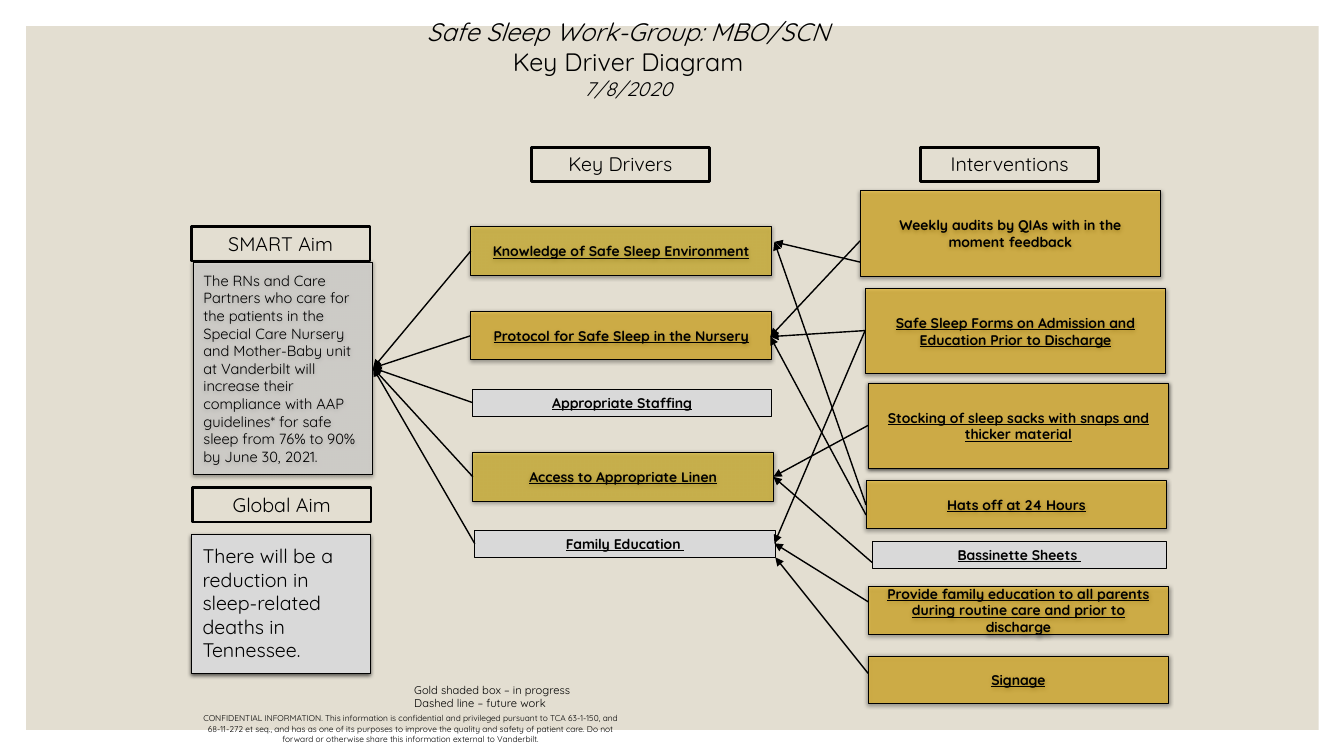
from dataclasses import dataclass

from lxml import etree
from pptx import Presentation
from pptx.dml.color import RGBColor
from pptx.enum.shapes import MSO_CONNECTOR, MSO_SHAPE
from pptx.enum.text import MSO_ANCHOR, PP_ALIGN
from pptx.oxml.ns import qn
from pptx.util import Inches, Pt

RECTANGLE = MSO_SHAPE.RECTANGLE
STRAIGHT = MSO_CONNECTOR.STRAIGHT
TOP, MIDDLE = MSO_ANCHOR.TOP, MSO_ANCHOR.MIDDLE
LEFT, CENTER = PP_ALIGN.LEFT, PP_ALIGN.CENTER
SLIDE_WIDTH, SLIDE_HEIGHT = Inches(13.33), Inches(7.5)


@dataclass(frozen=True)
class Theme:
    font: str = "Quicksand"
    ink: str = "000000"
    panel: str = "E3DED1"
    white: str = "FFFFFF"
    grey: str = "D9D9D9"
    yellow: str = "F3C70B"
    amber: str = "FFC000"
    gold: str = "CCAA46"
    title: float = 18
    heading: float = 14
    aim: float = 10.5
    label: float = 10
    legend: float = 8
    fine_print: float = 6


THEME = Theme()

# All lengths are percentages of the slide's width and height.
BOX_WIDTH = 22.36
TALL, MEDIUM, LOW, FLAT = 11.33, 6.4, 6.27, 3.6
HEADING_WIDTH, HEADING_HEIGHT = 13.28, 4.53
HEADINGS = [
    ("SMART Aim", 14.25, 30),
    ("Global Aim", 14.33, 64.53),
    ("Key Drivers", 39.53, 19.47),
    ("Interventions", 68.49, 19.47),
]

# Text, left, top, width, height, fill, opacity
DRIVERS = [
    ("Knowledge of Safe Sleep Environment", 35.03, 30, BOX_WIDTH, MEDIUM, THEME.yellow, 50),
    ("Protocol for Safe Sleep in the Nursery", 35.03, 41.2, BOX_WIDTH, MEDIUM, THEME.amber, 50),
    ("Appropriate Staffing", 35.18, 51.47, 22.21, FLAT, THEME.grey, 100),
    ("Access to Appropriate Linen", 35.18, 59.87, BOX_WIDTH, MEDIUM, THEME.yellow, 50),
    ("Family Education ", 35.33, 70.13, BOX_WIDTH, FLAT, THEME.grey, 100),
]

AIM = (27.76, 48.67)
KNOWLEDGE = (57.62, 32)
PROTOCOL = (57.31, 44.53)
LINEN = (57.54, 63.07)
EDUCATION = (57.62, 71.87)
EDUCATION_CORNER = (57.69, 73.73)

# A box as above, then its arrows: start row and driver reached
INTERVENTIONS = [
    (("Weekly audits by QIAs with in the moment feedback",
      63.99, 25.2, BOX_WIDTH, TALL, THEME.amber, 50),
     [(31.87, PROTOCOL), (34.67, KNOWLEDGE)]),
    (("Safe Sleep Forms on Admission and Education Prior to Discharge",
      64.37, 38.13, BOX_WIDTH, TALL, THEME.amber, 50),
     [(43.73, EDUCATION), (43.73, PROTOCOL)]),
    (("Stocking of sleep sacks with snaps and thicker material",
      64.59, 50.67, BOX_WIDTH, TALL, THEME.gold, 100),
     [(56.27, LINEN)]),
    (("Hats off at 24 Hours", 64.44, 63.6, BOX_WIDTH, LOW, THEME.amber, 50),
     [(66.8, KNOWLEDGE), (68.13, PROTOCOL)]),
    (("Bassinette Sheets ", 64.89, 71.6, 21.91, FLAT, THEME.grey, 100),
     [(74.4, LINEN)]),
    (("Provide family education to all parents during routine care and prior to discharge",
      64.59, 77.6, BOX_WIDTH, LOW, THEME.amber, 50),
     [(79.6, EDUCATION)]),
    (("Signage", 64.59, 86.8, BOX_WIDTH, LOW, THEME.amber, 50),
     [(89.07, EDUCATION_CORNER)]),
]


def across(share):
    return round(SLIDE_WIDTH * share / 100)


def down(share):
    return round(SLIDE_HEIGHT * share / 100)


def place(left, top, width, height):
    return across(left), down(top), across(width), down(height)


def write(shape, lines, size, align=CENTER, anchor=TOP, bold=False, underline=False):
    frame = shape.text_frame
    frame.word_wrap = True
    frame.vertical_anchor = anchor
    frame.text = "\n".join(lines)
    for paragraph in frame.paragraphs:
        paragraph.alignment = align
        for run in paragraph.runs:
            run.font.name = THEME.font
            run.font.size = Pt(size)
            run.font.bold = bold
            run.font.underline = underline
            run.font.color.rgb = RGBColor.from_string(THEME.ink)


def add_alpha(color_element, percent):
    etree.SubElement(color_element, qn("a:alpha"), val=str(percent * 1000))


def add_soft_shadow(shape):
    effects = shape.element.spPr.find(qn("a:effectLst"))
    shadow = etree.SubElement(effects, qn("a:outerShdw"), blurRad=str(Pt(3)),
                              dist=str(Pt(1)), dir="5400000", rotWithShape="0")
    add_alpha(etree.SubElement(shadow, qn("a:srgbClr"), val=THEME.ink), 63)


def add_box(slide, area, fill=None, opacity=100, line=None, shadow=False):
    shape = slide.shapes.add_shape(RECTANGLE, *place(*area))
    shape.shadow.inherit = False
    if fill:
        shape.fill.solid()
        shape.fill.fore_color.rgb = RGBColor.from_string(fill)
        if opacity < 100:
            add_alpha(shape.element.spPr.find(f"{qn('a:solidFill')}/{qn('a:srgbClr')}"), opacity)
    else:
        shape.fill.background()
    if line:
        shape.line.color.rgb = RGBColor.from_string(THEME.ink)
        shape.line.width = Pt(line)
    else:
        shape.line.fill.background()
    if shadow:
        add_soft_shadow(shape)
    return shape


def add_label_box(slide, text, left, top, width, height, fill, opacity):
    """Add a driver or intervention; grey ones are flat, the others cast a shadow."""
    raised = fill != THEME.grey
    shape = add_box(slide, (left, top, width, height), fill, opacity,
                    0.5 if raised else 0.75, raised)
    write(shape, [text], THEME.label, anchor=MIDDLE if raised else TOP,
          bold=True, underline=not text.startswith("Weekly"))


def add_heading(slide, text, left, top):
    shape = add_box(slide, (left, top, HEADING_WIDTH, HEADING_HEIGHT), line=2)
    write(shape, [text], THEME.heading)


def add_text(slide, area, lines, size, align=CENTER):
    shape = slide.shapes.add_textbox(*place(*area))
    write(shape, lines, size, align)
    return shape


def add_arrow(slide, start, end):
    arrow = slide.shapes.add_connector(
        STRAIGHT, across(start[0]), down(start[1]), across(end[0]), down(end[1]))
    arrow.line.color.rgb = RGBColor.from_string(THEME.ink)
    arrow.line.width = Pt(1)
    properties = arrow.element.spPr
    etree.SubElement(properties.find(qn("a:ln")), qn("a:tailEnd"), type="triangle")
    etree.SubElement(properties, qn("a:effectLst"))


def add_title(slide):
    title = add_text(slide, (21.53, 1.47, 50.41, 12.53),
                     ["Safe Sleep Work-Group: MBO/SCN", "Key Driver Diagram", "7/8/2020"],
                     THEME.title)
    group, _, date = (paragraph.runs[0].font for paragraph in title.text_frame.paragraphs)
    group.italic = date.italic = True
    date.size = Pt(THEME.heading)


def add_aims(slide):
    smart = add_box(slide, (14.4, 34.67, 13.28, 28.13), THEME.white, 50, 0.5, True)
    write(smart, ["The RNs and Care Partners who care for the patients in the Special Care "
                  "Nursery and Mother-Baby unit at Vanderbilt will increase their compliance "
                  "with AAP guidelines* for safe sleep from 76% to 90% by June 30, 2021."],
          THEME.aim, LEFT, MIDDLE)
    add_box(slide, (14.25, 70.67, 13.28, 18.4), THEME.grey, line=0.5, shadow=True)
    reduction = add_box(slide, (14.33, 71.33, 13.2, 13.87), THEME.grey)
    write(reduction, ["There will be a reduction in sleep-related deaths in Tennessee."],
          THEME.heading, LEFT)


def add_footer(slide):
    add_text(slide, (30.08, 89.73, 16.13, 4.93),
             ["Gold shaded box – in progress", "Dashed line – future work"], THEME.legend, LEFT)
    add_text(slide, (14.33, 93.73, 32.41, 5.33),
             ["CONFIDENTIAL INFORMATION. This information is confidential and privileged "
              "pursuant to TCA 63-1-150, and 68-11-272 et seq., and has as one of its purposes "
              "to improve the quality and safety of patient care. Do not forward or otherwise "
              "share this information external to Vanderbilt."], THEME.fine_print)


def main():
    presentation = Presentation()
    presentation.slide_width, presentation.slide_height = SLIDE_WIDTH, SLIDE_HEIGHT
    slide = presentation.slides.add_slide(presentation.slide_layouts[6])
    add_box(slide, (1.95, 3.47, 96.17, 93.07), THEME.panel)
    add_title(slide)
    add_aims(slide)
    for heading in HEADINGS:
        add_heading(slide, *heading)
    for driver in DRIVERS:
        add_label_box(slide, *driver)
        _, left, top, _, height, *_ = driver
        add_arrow(slide, (left, top + height / 2), AIM)
    for box, arrows in INTERVENTIONS:
        add_label_box(slide, *box)
        for row, target in arrows:
            add_arrow(slide, (box[1], row), target)
    add_footer(slide)
    presentation.save("out.pptx")


if __name__ == "__main__":
    main()
